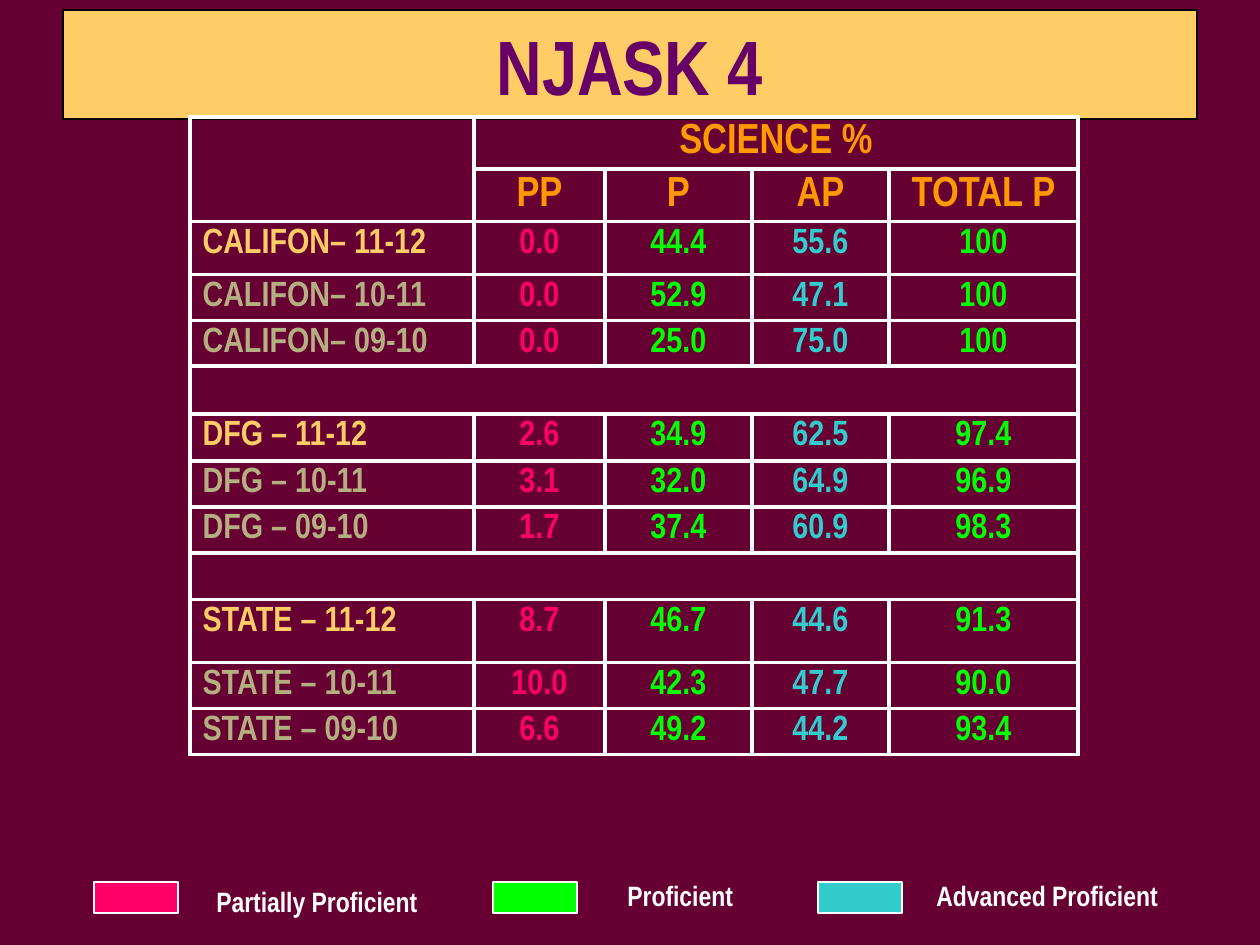
"""Build the NJASK 4 science results slide."""
from dataclasses import dataclass

from lxml.etree import SubElement
from pptx import Presentation
from pptx.dml.color import RGBColor as Rgb
from pptx.enum.shapes import MSO_SHAPE as Shape
from pptx.enum.text import MSO_ANCHOR as Anchor, MSO_AUTO_SIZE as AutoSize, PP_ALIGN as Align
from pptx.oxml.ns import qn
from pptx.util import Emu, Pt

SCALE = 914400 / 126
COLORS = {
    "maroon": "660033", "gold": "FFCC66", "purple": "660066", "orange": "FF9900",
    "khaki": "B4AF80", "pink": "FF0066", "green": "00FF00", "teal": "33CCCC",
    "white": "FFFFFF", "black": "000000",
}
COLUMN_WIDTHS = (284, 131, 147, 137, 189)
ROW_HEIGHTS = (52, 52, 53, 46, 45, 48, 47, 46, 46, 46, 63, 46, 46)
HEADINGS = ("PP", "P", "AP", "TOTAL P")
VALUE_COLORS = ("pink", "green", "teal", "green")
YEARS = ("11-12", "10-11", "09-10")


@dataclass(frozen=True)
class District:
    label: str
    first_row: int
    results: tuple[tuple[str, ...], ...]


@dataclass(frozen=True)
class LegendEntry:
    label: str
    color: str
    swatch_left: int
    label_left: int
    label_top: int
    label_width: int


DISTRICTS = (
    District("CALIFON–", 2, (("0.0", "44.4", "55.6", "100"),
                             ("0.0", "52.9", "47.1", "100"),
                             ("0.0", "25.0", "75.0", "100"))),
    District("DFG –", 6, (("2.6", "34.9", "62.5", "97.4"),
                          ("3.1", "32.0", "64.9", "96.9"),
                          ("1.7", "37.4", "60.9", "98.3"))),
    District("STATE –", 10, (("8.7", "46.7", "44.6", "91.3"),
                             ("10.0", "42.3", "47.7", "90.0"),
                             ("6.6", "49.2", "44.2", "93.4"))),
)
LEGEND = (
    LegendEntry("Partially Proficient", "pink", 94, 204, 878, 227),
    LegendEntry("Proficient", "green", 493, 615, 872, 131),
    LegendEntry("Advanced Proficient", "teal", 818, 924, 872, 247),
)


def px(length: int) -> Emu:
    return Emu(round(length * SCALE))


def rgb(color: str) -> Rgb:
    return Rgb.from_string(COLORS[color])


def write(frame, text: str, size: int, color: str, align=Align.LEFT) -> None:
    paragraph = frame.paragraphs[0]
    paragraph.alignment = align
    run = paragraph.add_run()
    run.text = text
    for name, value in {"name": "Arial Narrow", "size": Pt(size), "bold": True}.items():
        setattr(run.font, name, value)
    run.font.color.rgb = rgb(color)


def add_box(slide, bounds: tuple[int, ...], fill: str, line: str, weight: float):
    box = slide.shapes.add_shape(Shape.RECTANGLE, *map(px, bounds))
    box.shadow.inherit = False
    box.fill.solid()
    box.fill.fore_color.rgb = rgb(fill)
    box.line.color.rgb = rgb(line)
    box.line.width = Pt(weight)
    return box


def style_cell(cell) -> None:
    properties = cell._tc.get_or_add_tcPr()
    for side in ("lnL", "lnR", "lnT", "lnB"):
        border = SubElement(properties, qn(f"a:{side}"), w=str(Pt(2.25)))
        SubElement(SubElement(border, qn("a:solidFill")), qn("a:srgbClr"), val=COLORS["white"])
    cell.fill.background()
    paragraph = cell.text_frame.paragraphs[0]
    if not paragraph.runs:
        SubElement(paragraph._p, qn("a:endParaRPr"), sz="1600")


def add_results(slide) -> None:
    frame = slide.shapes.add_table(
        len(ROW_HEIGHTS), len(COLUMN_WIDTHS), px(190), px(117),
        px(sum(COLUMN_WIDTHS)), px(sum(ROW_HEIGHTS)))
    results = frame.table
    results.first_row = results.horz_banding = False
    for column, width in zip(results.columns, COLUMN_WIDTHS):
        column.width = px(width)
    for row, height in zip(results.rows, ROW_HEIGHTS):
        row.height = px(height)

    write(results.cell(0, 1).text_frame, "SCIENCE %", 24, "orange", Align.CENTER)
    for column, heading in enumerate(HEADINGS, 1):
        write(results.cell(1, column).text_frame, heading, 24, "orange", Align.CENTER)
    for district in DISTRICTS:
        for offset, (year, values) in enumerate(zip(YEARS, district.results)):
            row = district.first_row + offset
            year_color = "khaki" if offset else "gold"
            write(results.cell(row, 0).text_frame, f"{district.label} {year}", 20, year_color)
            for column, (value, color) in enumerate(zip(values, VALUE_COLORS), 1):
                write(results.cell(row, column).text_frame, value, 20, color, Align.CENTER)

    for row in range(len(ROW_HEIGHTS)):
        for column in range(len(COLUMN_WIDTHS)):
            style_cell(results.cell(row, column))
    for start, end in (((0, 0), (1, 0)), ((0, 1), (0, 4)), ((5, 0), (5, 4)), ((9, 0), (9, 4))):
        results.cell(*start).merge(results.cell(*end))


def add_legend_entry(slide, entry: LegendEntry) -> None:
    add_box(slide, (entry.swatch_left, 882, 84, 31), entry.color, "white", 1)
    label = slide.shapes.add_textbox(
        px(entry.label_left), px(entry.label_top), px(entry.label_width), px(47))
    for name, value in {"word_wrap": False, "auto_size": AutoSize.SHAPE_TO_FIT_TEXT}.items():
        setattr(label.text_frame, name, value)
    write(label.text_frame, entry.label, 16, "white")


def main() -> None:
    deck = Presentation()
    deck.slide_width, deck.slide_height = px(1260), px(945)
    slide = deck.slides.add_slide(deck.slide_layouts[6])
    slide.background.fill.solid()
    slide.background.fill.fore_color.rgb = rgb("maroon")

    title = add_box(slide, (63, 10, 1134, 109), "gold", "black", 0.75)
    title.text_frame.vertical_anchor = Anchor.MIDDLE
    write(title.text_frame, "NJASK 4", 44, "purple", Align.CENTER)
    add_results(slide)
    for entry in LEGEND:
        add_legend_entry(slide, entry)
    deck.save("out.pptx")


if __name__ == "__main__":
    main()
